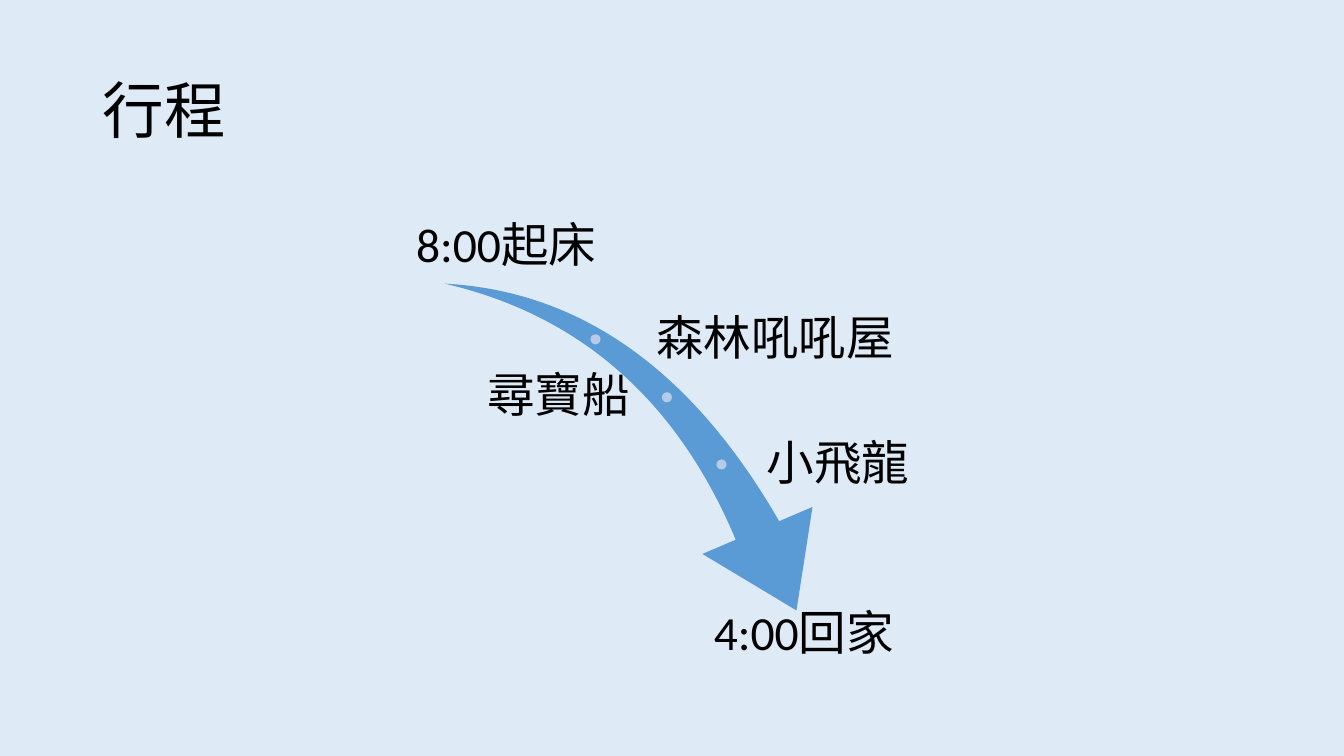
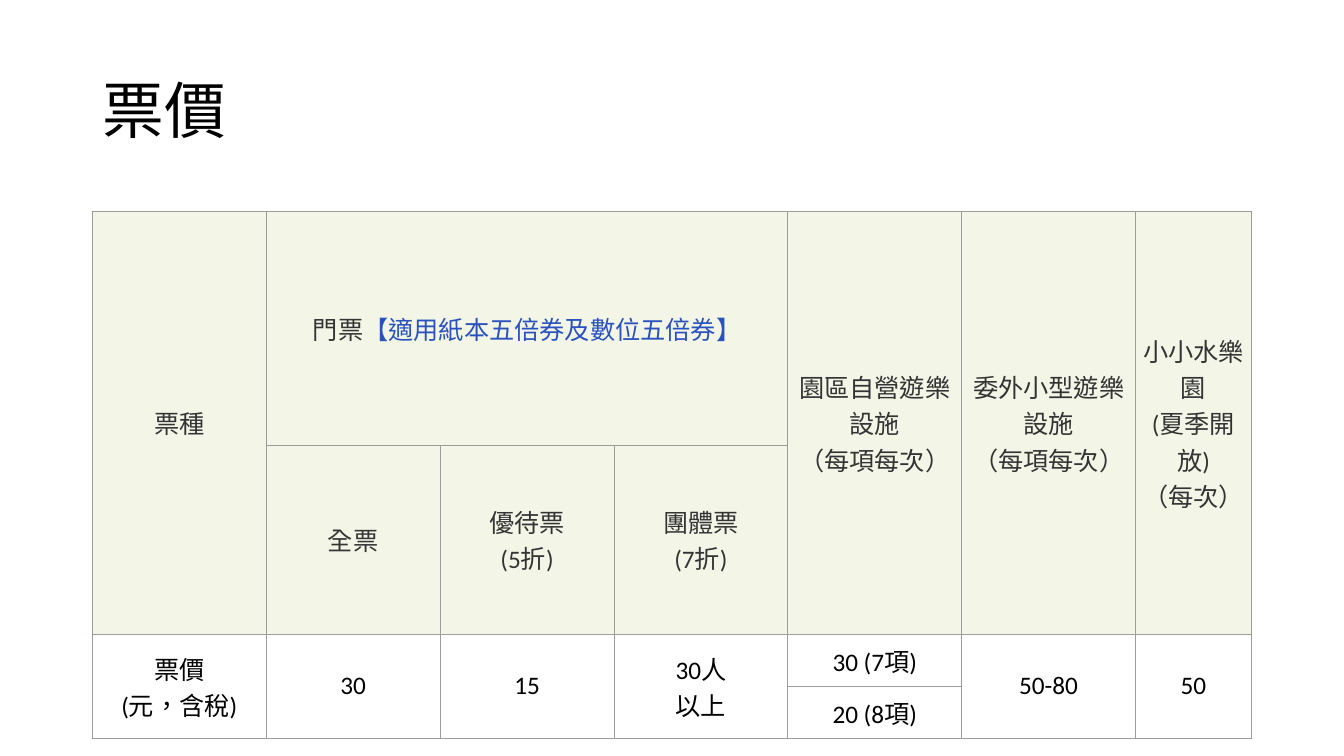
from dataclasses import dataclass

from lxml.etree import SubElement
from pptx import Presentation
from pptx.dml.color import RGBColor
from pptx.enum.lang import MSO_LANGUAGE_ID as Lang
from pptx.enum.shapes import MSO_SHAPE as Preset
from pptx.enum.text import MSO_ANCHOR as Anchor, PP_ALIGN as Align
from pptx.oxml.ns import qn
from pptx.util import Emu, Pt

CELL = 76200  # the slide is a grid of 160 columns by 90 rows
COLUMNS, ROWS = 160, 90
MARGIN, CONTENT_WIDTH = 11, 138
COLORS = {
    "sky": "DEEBF7", "white": "FFFFFF", "black": "000000", "arrow": "5B9BD5",
    "dot": "B5CBE7", "header": "F3F6E7", "header_text": "343434",
    "notice": "2A52BE", "border": "9C9C9C",
}


@dataclass(frozen=True)
class Box:
    left: float
    top: float
    width: float
    height: float

    def lengths(self) -> list[Emu]:
        return [grid(n) for n in (self.left, self.top, self.width, self.height)]


@dataclass(frozen=True)
class Stop:
    text: str
    box: Box
    align: Align = Align.LEFT
    anchor: Anchor = Anchor.MIDDLE


@dataclass(frozen=True)
class Entry:
    row: int
    column: int
    text: str
    row_span: int = 1
    column_span: int = 1
    notice: str = ""


LABEL_HEIGHT = 9.1
STOPS = [
    Stop("8:00起床", Box(48.6, 24, 23.3, LABEL_HEIGHT), Align.CENTER, Anchor.BOTTOM),
    Stop("森林吼吼屋", Box(77.5, 35.9, 34, LABEL_HEIGHT)),
    Stop("尋寶船", Box(48.6, 42.7, 27, LABEL_HEIGHT), Align.RIGHT),
    Stop("小飛龍", Box(90.7, 50.8, 20.8, LABEL_HEIGHT)),
    Stop("4:00回家", Box(80, 71.9, 31.4, LABEL_HEIGHT), Align.CENTER, Anchor.TOP),
]
ARROW = Box(51.8, 35.3, 49.3, 34.3)
DOT_SIZE = 1.2
DOTS = [(70.3, 39.8), (78.8, 46.7), (85.3, 54.7)]

HEADER_ROWS = 2
ROW_HEIGHTS = [27.8, 11.2, 6.2, 6.2]
COLUMN_SHARES = [3, 3, 3, 3, 3, 3, 2]
ENTRIES = [
    Entry(0, 0, "票種", row_span=2),
    Entry(0, 1, "門票", column_span=3, notice="【適用紙本五倍券及數位五倍券】"),
    Entry(0, 4, "園區自營遊樂設施\n（每項每次）", row_span=2),
    Entry(0, 5, "委外小型遊樂設施\n（每項每次）", row_span=2),
    Entry(0, 6, "小小水樂園\n(夏季開放)\n（每次）", row_span=2),
    Entry(1, 1, "全票"),
    Entry(1, 2, "優待票\n(5折)"),
    Entry(1, 3, "團體票\n(7折)"),
    Entry(2, 0, "票價\n(元，含稅)", row_span=2),
    Entry(2, 1, "30", row_span=2),
    Entry(2, 2, "15", row_span=2),
    Entry(2, 3, "30人\n以上", row_span=2),
    Entry(2, 4, "30 (7項)"),
    Entry(2, 5, "50-80", row_span=2),
    Entry(2, 6, "50", row_span=2),
    Entry(3, 4, "20 (8項)"),
]


def grid(count: float) -> Emu:
    return Emu(round(count * CELL))


def color(name: str) -> RGBColor:
    return RGBColor.from_string(COLORS[name])


def apply(target, **values) -> None:
    for name, value in values.items():
        setattr(target, name, value)


def set_margins(target, size: float) -> None:
    for side in ("left", "right", "top", "bottom"):
        setattr(target, f"margin_{side}", grid(size))


def add_text(para, text: str, size: float, color_name: str) -> None:
    for index, line in enumerate(text.split("\n")):
        if index:
            para.add_line_break()
        span = para.add_run()
        span.text = line
        apply(span.font, name="Calibri", size=Pt(size),
              language_id=Lang.TRADITIONAL_CHINESE)
        span.font.color.rgb = color(color_name)


def fill_frame(frame, text: str, size: float, align: Align, anchor: Anchor) -> None:
    apply(frame, word_wrap=True, vertical_anchor=anchor)
    para = frame.paragraphs[0]
    apply(para, alignment=align, line_spacing=0.9)
    add_text(para, text, size, "black")


def add_page(deck, title: str, background: str):
    page = deck.slides.add_slide(deck.slide_layouts[5])
    page.background.fill.solid()
    page.background.fill.fore_color.rgb = color(background)
    names = ("left", "top", "width", "height")
    box = Box(MARGIN, 4.8, CONTENT_WIDTH, 17.4)
    apply(page.shapes.title, **dict(zip(names, box.lengths())))
    fill_frame(page.shapes.title.text_frame, title, 44, Align.LEFT, Anchor.MIDDLE)
    return page


def add_plain_shape(page, preset: Preset, box: Box, fill: str):
    shape = page.shapes.add_shape(preset, *box.lengths())
    shape.shadow.inherit = False
    shape.fill.solid()
    shape.fill.fore_color.rgb = color(fill)
    shape.line.fill.background()
    return shape


def add_route(page) -> None:
    arrow = add_plain_shape(page, Preset.SWOOSH_ARROW, ARROW, "arrow")
    arrow.rotation = 73.3
    arrow.adjustments[0], arrow.adjustments[1] = 0.163, 0.314
    for left, top in DOTS:
        add_plain_shape(page, Preset.OVAL, Box(left, top, DOT_SIZE, DOT_SIZE), "dot")
    for stop in STOPS:
        frame = page.shapes.add_textbox(*stop.box.lengths()).text_frame
        set_margins(frame, 0.6)
        fill_frame(frame, stop.text, 34, stop.align, stop.anchor)


def style_cell(cell, fill: str) -> None:
    properties = cell._tc.get_or_add_tcPr()
    for side in ("lnL", "lnR", "lnT", "lnB"):
        line = SubElement(properties, qn(f"a:{side}"), w=str(Pt(0.75)))
        solid = SubElement(line, qn("a:solidFill"))
        SubElement(solid, qn("a:srgbClr"), val=COLORS["border"])
    cell.fill.solid()
    cell.fill.fore_color.rgb = color(fill)
    cell.vertical_anchor = Anchor.MIDDLE
    set_margins(cell, 0.4)


def add_prices(page) -> None:
    box = Box(MARGIN, 25.2, CONTENT_WIDTH, sum(ROW_HEIGHTS))
    table = page.shapes.add_table(
        len(ROW_HEIGHTS), len(COLUMN_SHARES), *box.lengths()).table
    apply(table, first_row=False, horz_banding=False)
    for column, share in zip(table.columns, COLUMN_SHARES):
        column.width = grid(CONTENT_WIDTH * share / sum(COLUMN_SHARES))
    for index, (row, height) in enumerate(zip(table.rows, ROW_HEIGHTS)):
        row.height = grid(height)
        for cell in row.cells:
            style_cell(cell, "header" if index < HEADER_ROWS else "white")
    for entry in ENTRIES:
        cell = table.cell(entry.row, entry.column)
        if entry.row_span > 1 or entry.column_span > 1:
            cell.merge(table.cell(entry.row + entry.row_span - 1,
                                  entry.column + entry.column_span - 1))
        para = cell.text_frame.paragraphs[0]
        para.alignment = Align.CENTER
        add_text(para, entry.text, 18,
                 "header_text" if entry.row < HEADER_ROWS else "black")
        if entry.notice:
            add_text(para, entry.notice, 18, "notice")


def main() -> None:
    deck = Presentation()
    apply(deck, slide_width=grid(COLUMNS), slide_height=grid(ROWS))
    add_route(add_page(deck, "行程", "sky"))
    add_prices(add_page(deck, "票價", "white"))
    deck.save("out.pptx")


if __name__ == "__main__":
    main()
